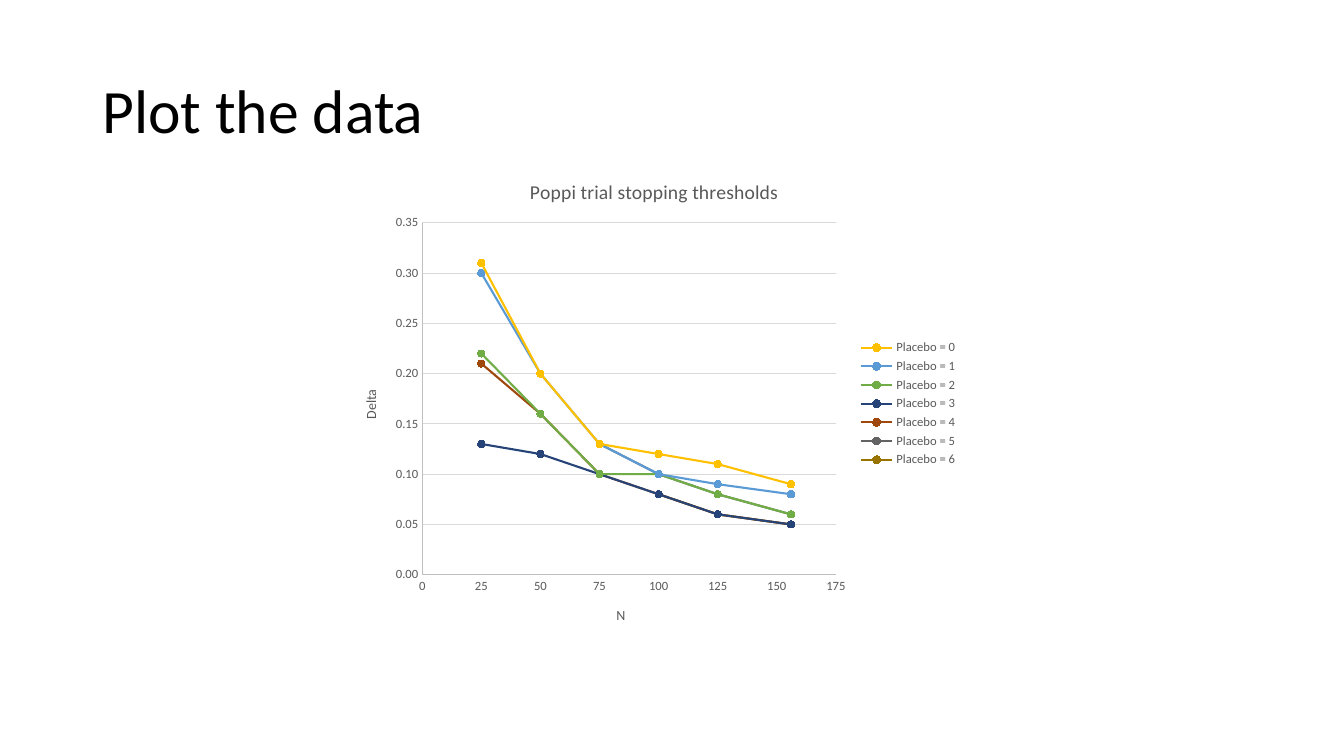
from lxml.etree import SubElement as Sub
from pptx import Presentation
from pptx.chart.data import XyChartData
from pptx.dml.color import RGBColor
from pptx.enum.chart import XL_CHART_TYPE as Kind, XL_LEGEND_POSITION as Side
from pptx.enum.chart import XL_MARKER_STYLE as Mark, XL_TICK_MARK as Tick
from pptx.enum.text import MSO_ANCHOR as Anchor, MSO_AUTO_SIZE as Fit, PP_ALIGN as Align
from pptx.oxml.ns import qn
from pptx.util import Pt

FACE = "Calibri"
GREY = "595959"
STEPS = [25, 50, 75, 100, 125, 156]
LINES = [
    ("FFC000", [0.31, 0.2, 0.13, 0.12, 0.11, 0.09]),
    ("5B9BD5", [0.3, 0.2, 0.13, 0.1, 0.09, 0.08]),
    ("70AD47", [0.22, 0.16, 0.1, 0.1, 0.08, 0.06]),
    ("264478", [0.13, 0.12, 0.1, 0.08, 0.06, 0.05]),
    ("9E480E", [0.21, 0.16, 0.1, 0.08, 0.06, 0.05]),
    ("636363", [0.13, 0.1, 0.08, 0.06]),
    ("997300", [0.08, 0.06, 0.05]),
]


def paint(hue):
    return RGBColor.from_string(hue)


def style(font, size, hue):
    font.name = FACE
    font.size = Pt(size)
    font.bold = False
    font.color.rgb = paint(hue)


def write(frame, text, size=10, hue=GREY, align=None, space=None):
    para = frame.paragraphs[0]
    run = para.add_run()
    run.text = text
    style(run.font, size, hue)
    para.alignment = align
    para.line_spacing = space


def stroke(line, hue, width):
    line.color.rgb = paint(hue)
    line.width = Pt(width)


def place(shape, box):
    shape.left, shape.top, shape.width, shape.height = map(Pt, box)


def head(slide, box, text):
    title = slide.shapes.title
    place(title, box)
    frame = title.text_frame
    frame.auto_size = Fit.NONE
    frame.vertical_anchor = Anchor.MIDDLE
    write(frame, text, size=44, hue="000000", align=Align.LEFT, space=0.9)


def scale(axis, name, top, step, code):
    axis.minimum_scale = 0
    axis.maximum_scale = top
    axis.major_unit = step
    axis.major_tick_mark = axis.minor_tick_mark = Tick.NONE
    labels = axis.tick_labels
    labels.number_format = code
    labels.number_format_is_linked = False
    style(labels.font, 9, GREY)
    stroke(axis.format.line, "BFBFBF", 0.75)
    write(axis.axis_title.text_frame, name)


def frame_plot(chart, spots):
    area = chart.plots[0]._element.getparent()
    for old in area.findall(qn("c:layout")):
        area.remove(old)
    layout = Sub(area, qn("c:layout"))
    area.insert(0, layout)
    manual = Sub(layout, qn("c:manualLayout"))
    rules = [("layoutTarget", "inner"), ("xMode", "edge"), ("yMode", "edge")]
    for key, val in rules + list(zip("xywh", spots)):
        Sub(manual, qn("c:" + key)).set("val", str(val))


def graph(slide, box):
    data = XyChartData(number_format="0.00")
    for rank, (hue, vals) in enumerate(LINES):
        line = data.add_series(f"Placebo = {rank}")
        for step, val in zip(STEPS[-len(vals):], vals):
            line.add_data_point(step, val)
    chart = slide.shapes.add_chart(Kind.XY_SCATTER_LINES, *map(Pt, box), data).chart
    style(chart.font, 10, "000000")
    chart.has_title = True
    write(chart.chart_title.text_frame, "Poppi trial stopping thresholds", size=14)
    chart.chart_title.include_in_layout = False

    base, side = chart.category_axis, chart.value_axis
    scale(base, "N", 175, 25, "General")
    scale(side, "Delta", 0.35, 0.05, "0.00")
    base.has_major_gridlines = False
    side.has_major_gridlines = True
    stroke(side.major_gridlines.format.line, "D9D9D9", 0.75)
    turn = side.axis_title.text_frame._txBody.find(qn("a:bodyPr"))
    turn.set("rot", "-5400000")
    turn.set("vert", "horz")

    chart.has_legend = True
    chart.legend.position = Side.RIGHT
    chart.legend.include_in_layout = False
    style(chart.legend.font, 9, GREY)
    chart.plots[0].vary_by_categories = False
    for line, (hue, vals) in zip(chart.plots[0].series, LINES):
        line.smooth = False
        stroke(line.format.line, hue, 1.5)
        dot = line.marker
        dot.style = Mark.CIRCLE
        dot.size = 5
        dot.format.fill.solid()
        dot.format.fill.fore_color.rgb = paint(hue)
        stroke(dot.format.line, hue, 0.75)
    frame_plot(chart, [0.13, 0.13, 0.66, 0.72])


def main():
    deck = Presentation()
    deck.slide_width, deck.slide_height = Pt(960), Pt(540)
    slide = deck.slides.add_slide(deck.slide_layouts[5])
    head(slide, (66, 28.75, 828, 104.4), "Plot the data")
    graph(slide, (243.4, 113.8, 447.8, 349.2))
    deck.save("out.pptx")


if __name__ == "__main__":
    main()
